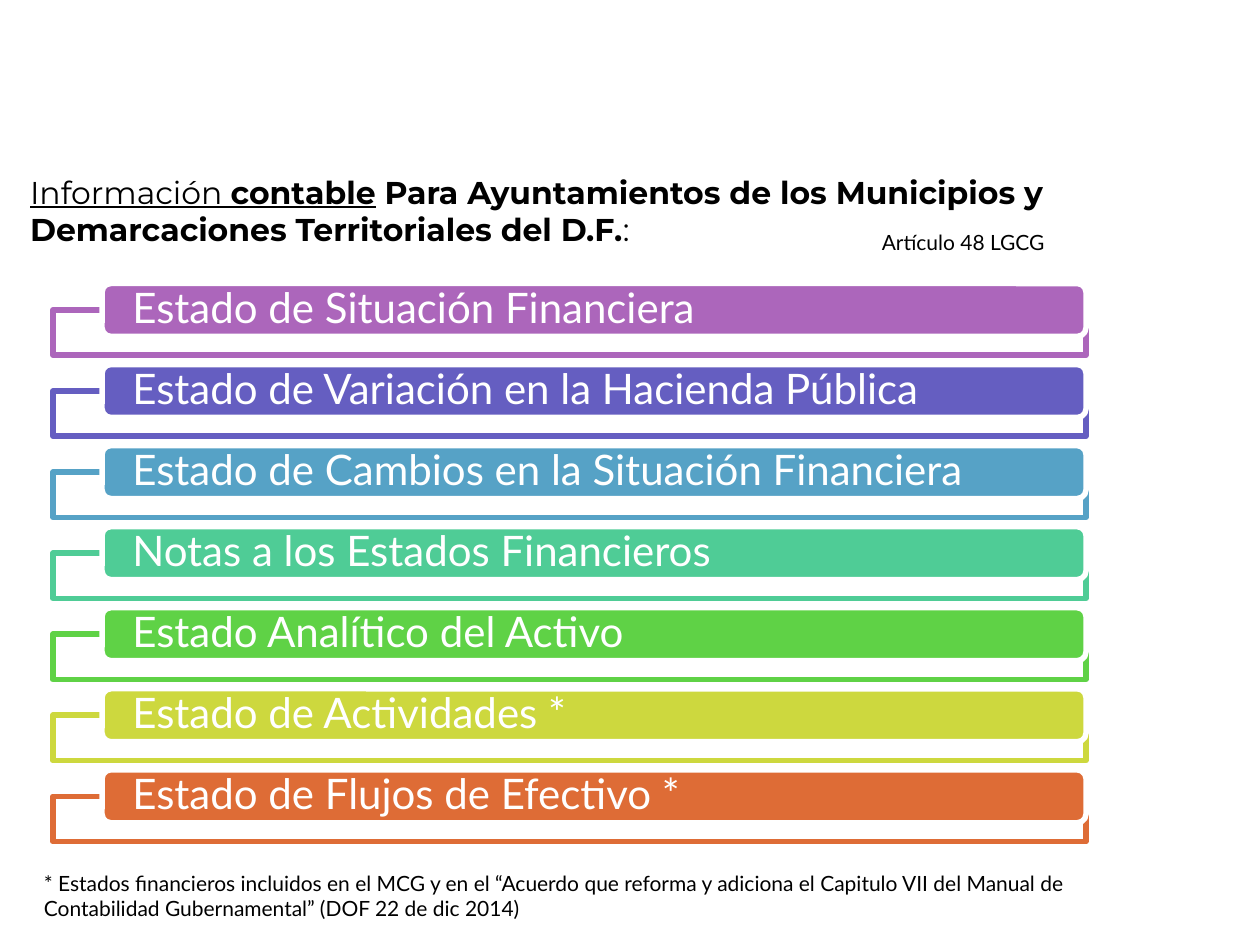
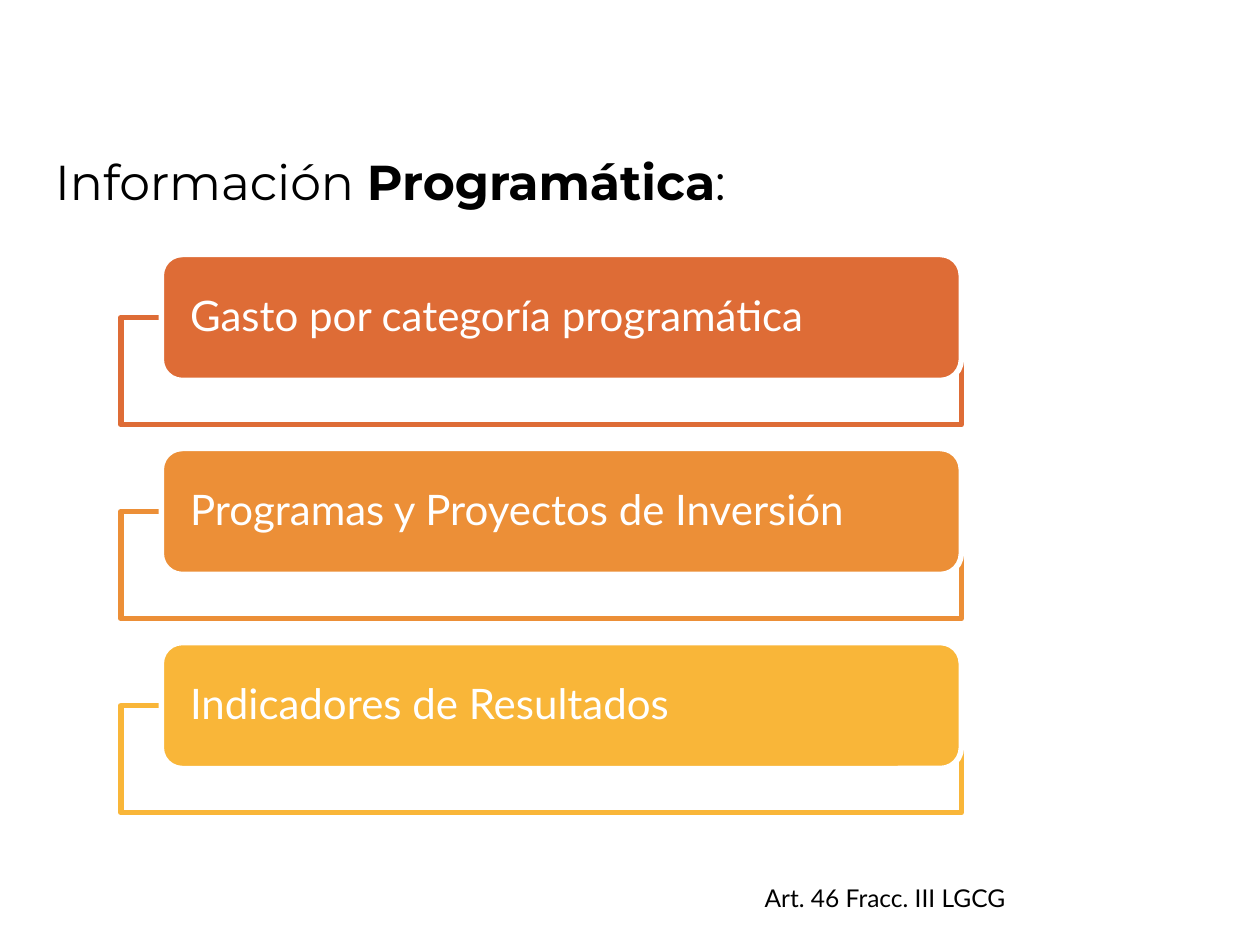
from lxml.etree import SubElement
from pptx import Presentation
from pptx.dml.color import RGBColor
from pptx.enum.shapes import MSO_SHAPE
from pptx.enum.text import MSO_ANCHOR, MSO_AUTO_SIZE, PP_ALIGN
from pptx.oxml.ns import qn
from pptx.util import Inches, Pt

WHITE, BLACK, ORANGE = "FFFFFF", "000000", "DE6C36"
HEAD, BODY = "Montserrat", "Lato"
BAR_SIZE, EDGE = 24, 3.15

# Each run is (text, format); each box is (left, top, width, height).
SLIDES = [
    {
        "bars": [
            ("Estado de Situación Financiera", "AC66BB"),
            ("Estado de Variación en la Hacienda Pública", "655EC1"),
            ("Estado de Cambios en la Situación Financiera", "56A2C6"),
            ("Notas a los Estados Financieros", "4FCC96"),
            ("Estado Analítico del Activo", "5FD246"),
            ("Estado de Actividades *", "CDD83E"),
            ("Estado de Flujos de Efectivo *", ORANGE),
        ],
        "frame": (0.42, 2.46, 8.2, 0.36),
        "bar": (0.81, 2.25, 7.81, 0.42),
        "last": 6.32,
        "inset": 0.22,
        "texts": [
            {"box": (0.14, 1.32, 8.66, 0.71), "font": HEAD, "size": 18, "runs": [
                ("Información ", {"underline": True}),
                ("contable", {"underline": True, "bold": True}),
                (" Para Ayuntamientos de los Municipios y "
                 "Demarcaciones Territoriales del D.F.", {"bold": True}),
                (":", {}),
            ]},
            {"box": (6.9, 1.77, 1.53, 0.3), "size": 12, "wrap": False,
             "runs": [("Artículo 48 LGCG", {})]},
            {"box": (0.25, 6.86, 8.43, 0.5), "size": 12, "runs": [
                ("* Estados financieros incluidos en el MCG y en el “Acuerdo que "
                 "reforma y adiciona el Capitulo VII del Manual de Contabilidad "
                 "Gubernamental” (DOF 22 de dic 2014)", {}),
            ]},
        ],
    },
    {
        "bars": [
            ("Gasto por categoría programática", ORANGE),
            ("Programas y Proyectos de Inversión", "EC8F37"),
            ("Indicadores de Resultados", "F9B639"),
        ],
        "frame": (0.96, 2.52, 6.67, 0.85),
        "bar": (1.28, 2.02, 6.35, 1),
        "last": 5.6,
        "inset": 0.18,
        "texts": [
            {"box": (0.14, 1.15, 6.16, 0.57), "font": HEAD, "size": 28,
             "wrap": False, "indent": 0.2, "runs": [
                 ("Información ", {}),
                 ("Programática", {"bold": True}),
                 (":", {}),
             ]},
            {"box": (5.97, 6.96, 2.18, 0.34), "size": 14, "wrap": False,
             "runs": [("Art. 46 Fracc. III LGCG", {})]},
        ],
    },
]


def color(code):
    return RGBColor.from_string(code)


def put(item, **values):
    for name, value in values.items():
        setattr(item, name, value)


def add_run(para, text, code, **style):
    run = para.add_run()
    run.text = text
    put(run.font, **style)
    run.font.color.rgb = color(code)


def add_text(slide, text):
    frame = slide.shapes.add_textbox(*map(Inches, text["box"])).text_frame
    put(frame, word_wrap=text.get("wrap", True),
        auto_size=MSO_AUTO_SIZE.SHAPE_TO_FIT_TEXT)
    para = frame.paragraphs[0]
    if "indent" in text:
        props = para._p.get_or_add_pPr()
        props.set("marL", "0")
        props.set("indent", str(Inches(text["indent"])))
    for words, style in text["runs"]:
        add_run(para, words, BLACK, name=text.get("font", BODY),
                size=Pt(text["size"]), **style)


def add_block(slide, kind, box, drop, fill, line):
    """Add a filled, outlined shape moved down by drop inches."""
    left, top, width, height = box
    shape = slide.shapes.add_shape(
        kind, *map(Inches, (left, top + drop, width, height)))
    shape.shadow.inherit = False
    shape.fill.solid()
    shape.fill.fore_color.rgb = color(fill)
    shape.line.color.rgb = color(line)
    shape.line.width = Pt(EDGE)
    return shape


def add_bars(slide, data):
    bars = data["bars"]
    step = (data["last"] - data["frame"][1]) / (len(bars) - 1)
    for row, (label, code) in enumerate(bars):
        drop = row * step
        frame = add_block(slide, MSO_SHAPE.RECTANGLE, data["frame"], drop, WHITE, code)
        tint = frame.fill._xPr.find(qn("a:solidFill"))[0]
        SubElement(tint, qn("a:alpha"), val="90000")
        bar = add_block(slide, MSO_SHAPE.ROUNDED_RECTANGLE, data["bar"], drop, code, WHITE)
        inset = Inches(data["inset"])
        put(bar.text_frame, word_wrap=True, vertical_anchor=MSO_ANCHOR.MIDDLE,
            margin_left=inset, margin_right=inset, margin_top=0, margin_bottom=0)
        para = bar.text_frame.paragraphs[0]
        put(para, alignment=PP_ALIGN.LEFT, line_spacing=0.9)
        add_run(para, label, WHITE, name=BODY, size=Pt(BAR_SIZE))


def main():
    deck = Presentation()
    put(deck, slide_width=Inches(10), slide_height=Inches(7.5))
    for data in SLIDES:
        slide = deck.slides.add_slide(deck.slide_layouts[6])
        add_bars(slide, data)
        for text in data["texts"]:
            add_text(slide, text)
    deck.save("out.pptx")


if __name__ == "__main__":
    main()
